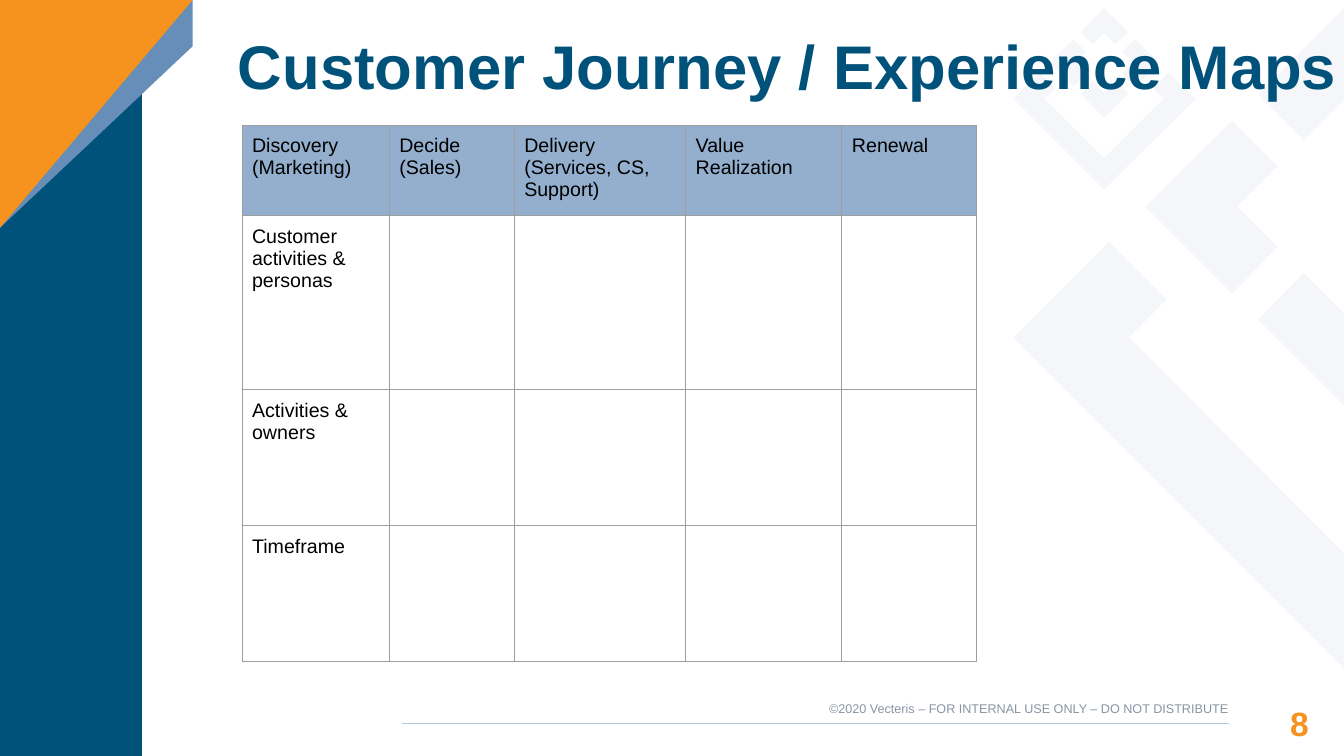
"""Build the customer journey map slide on a grid of 1333 columns by 750 rows."""
from lxml.etree import SubElement
from pptx import Presentation
from pptx.dml.color import RGBColor
from pptx.enum.shapes import MSO_CONNECTOR
from pptx.enum.text import MSO_ANCHOR as Anchor, PP_ALIGN as Align
from pptx.oxml import parse_xml
from pptx.oxml.ns import nsdecls, qn
from pptx.util import Inches, Pt

NAVY = RGBColor(0x00, 0x52, 0x7B)
BLUE = RGBColor(0x66, 0x8E, 0xB8)
ORANGE = RGBColor(0xF6, 0x92, 0x1E)
PALE = RGBColor(0xE9, 0xEE, 0xF4)
RULE = RGBColor(0xB3, 0xC6, 0xDC)
HEADER = RGBColor(0x93, 0xAF, 0xCD)
GREY = RGBColor(0x87, 0x96, 0xA4)
BLACK = RGBColor(0, 0, 0)
BORDER = "9E9E9E"

deck = Presentation()
deck.slide_width, deck.slide_height = Inches(13.33), Inches(7.5)
CELL = deck.slide_width // 1333
page = deck.slides.add_slide(deck.slide_layouts[6])


def draw_outline(points, color, opacity=100):
    """Draw a filled outline through grid points."""
    builder = page.shapes.build_freeform(*points[0], scale=CELL)
    builder.add_line_segments(points[1:], close=True)
    shape = builder.convert_to_shape()
    shape.shadow.inherit = False
    shape.line.fill.background()
    shape.fill.solid()
    shape.fill.fore_color.rgb = color
    if opacity < 100:
        tint = shape.fill._xPr.find(qn("a:solidFill"))[0]
        SubElement(tint, qn("a:alpha"), val=str(opacity * 1000))


def write(frame, text, size=14, color=BLACK, bold=False, align=Align.LEFT,
          spacing=1.0, anchor=Anchor.TOP, margin=0):
    """Fill a text frame, one paragraph for each line of text."""
    frame.word_wrap = True
    frame.vertical_anchor = anchor
    frame.margin_left = frame.margin_right = margin
    frame.margin_top = frame.margin_bottom = margin
    for index, line in enumerate(text.split("\n")):
        para = frame.add_paragraph() if index else frame.paragraphs[0]
        para.alignment, para.line_spacing = align, spacing
        span = para.add_run()
        span.text = line
        span.font.name, span.font.size = "Arial", Pt(size)
        span.font.bold, span.font.color.rgb = bold, color


backdrop = [
    [(1222, 120), (1136, 205), (1222, 291), (1267, 245), (1227, 205), (1267, 165)],
    [(1100, 240), (1005, 335), (1333, 663), (1333, 549), (1120, 335), (1157, 297)],
    [(1293, 271), (1248, 317), (1333, 402), (1333, 311)],
    [(1333, 8), (1248, 94), (1293, 139), (1333, 99)],
    [(1126, 39), (1113, 51), (1124, 62), (1113, 73), (1126, 86), (1150, 62)],
    [(1065, 39), (1041, 62), (1065, 86), (1077, 73), (1066, 62), (1077, 51)],
    [(1095, 8), (1072, 32), (1084, 44), (1095, 33), (1106, 44), (1119, 32)],
    [(1084, 80), (1072, 93), (1095, 117), (1119, 93), (1106, 80), (1095, 92)],
    [(1031, 72), (1005, 98), (1095, 188), (1186, 98), (1159, 72),
     (1144, 88), (1154, 98), (1095, 157), (1036, 98), (1047, 88)],
]
for points in backdrop:
    draw_outline(points, PALE, opacity=49)

draw_outline([(0, 0), (141, 0), (141, 750), (0, 750)], NAVY)
draw_outline([(191, 0), (0, 0), (0, 226), (191, 46)], BLUE)
draw_outline([(191, 0), (0, 0), (0, 226)], ORANGE)

for right in (1218, 1219):
    rule = page.shapes.add_connector(
        MSO_CONNECTOR.STRAIGHT, 399 * CELL, 718 * CELL, right * CELL, 718 * CELL)
    rule.line.color.rgb, rule.line.width = RULE, Pt(0.82)
    SubElement(rule._element.spPr, qn("a:effectLst"))

labels = [
    ((1218, 690, 80, 38), "8",
     dict(size=24, color=ORANGE, bold=True, align=Align.RIGHT, spacing=1.19)),
    ((792, 695, 426, 15), "©2020 Vecteris – FOR INTERNAL USE ONLY – DO NOT DISTRIBUTE",
     dict(size=9, color=GREY, align=Align.RIGHT)),
    ((236, 35, 1097, 68), "Customer Journey / Experience Maps",
     dict(size=44, color=NAVY, bold=True, spacing=0.9, anchor=Anchor.MIDDLE)),
]
for place, text, style in labels:
    box = page.shapes.add_textbox(*(length * CELL for length in place))
    write(box.text_frame, text, **style)

stages = ["Discovery\n(Marketing)", "Decide\n(Sales)",
          "Delivery\n(Services, CS, Support)", "Value Realization", "Renewal"]
topics = ["Customer activities & personas", "Activities & owners", "Timeframe"]
rows = [stages] + [[topic] + [""] * (len(stages) - 1) for topic in topics]
widths = [146, 124, 170, 155, 134]
heights = [90, 172, 135, 135]

journey = page.shapes.add_table(
    len(rows), len(widths), 240 * CELL, 124 * CELL,
    sum(widths) * CELL, sum(heights) * CELL).table
for column, width in zip(journey.columns, widths):
    column.width = width * CELL
for row, height, texts in zip(journey.rows, heights, rows):
    row.height = height * CELL
    for cell, text in zip(row.cells, texts):
        cell.margin_left = cell.margin_right = 10 * CELL
        cell.margin_top = cell.margin_bottom = 10 * CELL
        properties = cell._tc.get_or_add_tcPr()
        for side in "LRTB":
            properties.append(parse_xml(
                f'<a:ln{side} {nsdecls("a")} w="{Pt(0.75)}"><a:solidFill>'
                f'<a:srgbClr val="{BORDER}"/></a:solidFill></a:ln{side}>'))
        if texts is stages:
            cell.fill.solid()
            cell.fill.fore_color.rgb = HEADER
        else:
            cell.fill.background()
        if text:
            for index, line in enumerate(text.split("\n")):
                frame = cell.text_frame
                para = frame.add_paragraph() if index else frame.paragraphs[0]
                span = para.add_run()
                span.text = line
                span.font.name, span.font.size = "Arial", Pt(14)
                span.font.bold, span.font.color.rgb = False, BLACK

deck.save("out.pptx")
